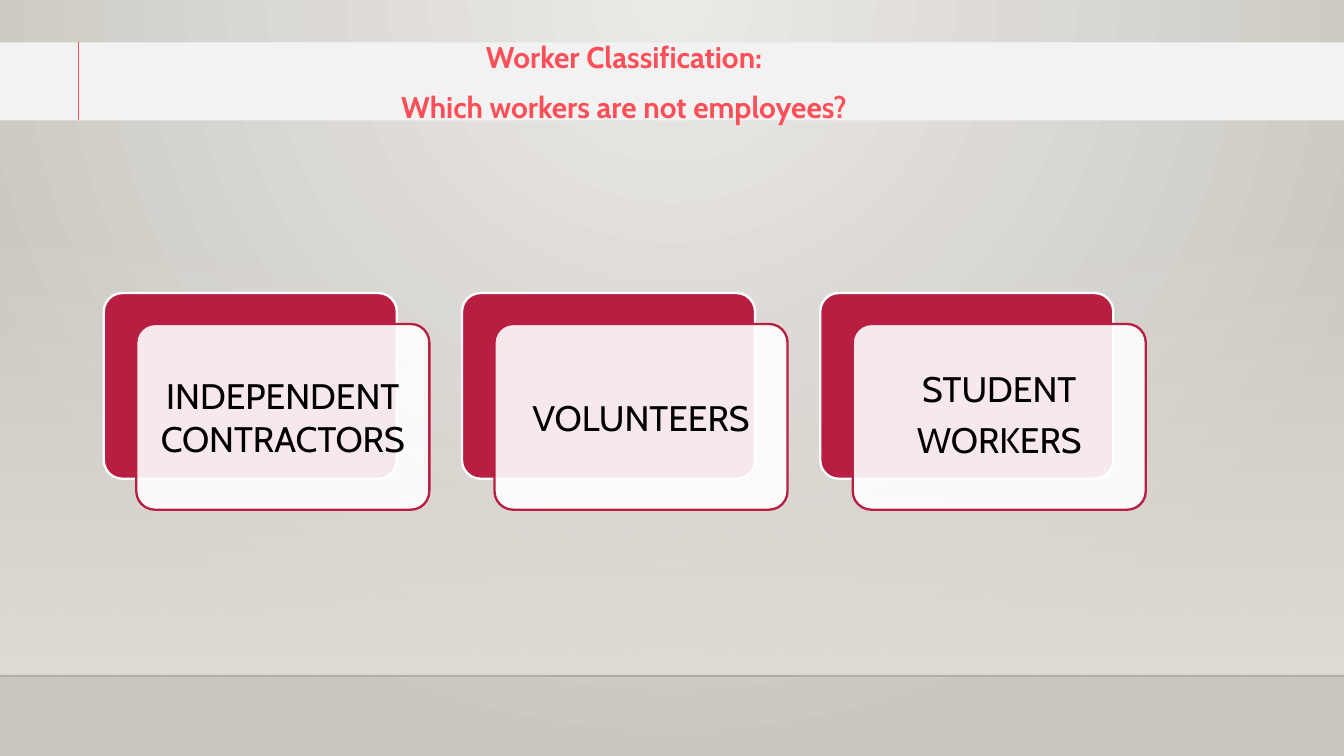
"""Build the worker classification slide with three layered cards."""
from dataclasses import dataclass

from lxml import etree
from pptx import Presentation
from pptx.dml.color import RGBColor
from pptx.enum import shapes, text
from pptx.oxml import ns
from pptx.util import Pt


@dataclass(frozen=True)
class Theme:
    font: str = "Cabin"
    title_size: float = 16
    card_size: float = 19
    coral: RGBColor = RGBColor(0xFD, 0x4F, 0x57)
    crimson: RGBColor = RGBColor(0xB7, 0x1E, 0x42)
    white: RGBColor = RGBColor(0xFF, 0xFF, 0xFF)
    black: RGBColor = RGBColor(0, 0, 0)
    band: RGBColor = RGBColor(0xF2, 0xF2, 0xF2)
    wall: RGBColor = RGBColor(0xDF, 0xDB, 0xD5)
    glow: RGBColor = RGBColor(0xEC, 0xEA, 0xE7)
    edge: RGBColor = RGBColor(0xCA, 0xC7, 0xC1)
    shade: RGBColor = RGBColor(0, 0, 1)


def set_opacity(color, percent):
    etree.SubElement(color, ns.qn("a:alpha"), val=str(percent * 1000))


def add_panel(page, kind, left, top, width, height):
    panel = page.shapes.add_shape(kind, Pt(left), Pt(top), Pt(width), Pt(height))
    panel.shadow.inherit = False
    return panel


theme = Theme()
deck = Presentation()
deck.slide_width, deck.slide_height = Pt(720), Pt(405)
page = deck.slides.add_slide(deck.slide_layouts[5])

backdrop = page.background.fill
backdrop.gradient()
for stop, color, position in zip(backdrop.gradient_stops, (theme.glow, theme.edge), (0, 1)):
    stop.color.rgb = color
    stop.position = position
linear = page._element.xpath("./p:cSld/p:bg//a:lin")[0]
radial = etree.Element(ns.qn("a:path"), path="circle")
etree.SubElement(radial, ns.qn("a:fillToRect"), l="43000", t="0", r="43000", b="100000")
linear.getparent().replace(linear, radial)

wall = add_panel(page, shapes.MSO_SHAPE.RECTANGLE, 0, 119.5, 720, 242.5)
wall.line.fill.background()
wall.fill.gradient()
wall.fill.gradient_angle = 270
for stop, position in zip(wall.fill.gradient_stops, (0, 1)):
    stop.color.rgb = theme.wall
    stop.position = position
set_opacity(wall._element.xpath(".//a:gs/a:srgbClr")[0], 0)

band = add_panel(page, shapes.MSO_SHAPE.RECTANGLE, 0, 22.7, 720, 41.8)
band.fill.solid()
band.fill.fore_color.rgb = theme.band
band.line.fill.background()

rules = (
    (0, 362, 720, 362, theme.shade, 1, 20),
    (42, 22.7, 42, 64.5, theme.coral, 0.75, 100),
)
for left, top, right, bottom, color, weight, opacity in rules:
    rule = page.shapes.add_connector(
        shapes.MSO_CONNECTOR.STRAIGHT, Pt(left), Pt(top), Pt(right), Pt(bottom)
    )
    rule.line.color.rgb = color
    rule.line.width = Pt(weight)
    etree.SubElement(rule._element.spPr, ns.qn("a:effectLst"))
    if opacity < 100:
        set_opacity(rule._element.xpath(".//a:ln//a:srgbClr")[0], opacity)

title = page.shapes.title
page.shapes._spTree.append(title._element)
title.left, title.top, title.width, title.height = Pt(55.4), Pt(17.3), Pt(558), Pt(42.5)
frame = title.text_frame
frame.text = "Worker Classification:\nWhich workers are not employees?"
frame.word_wrap = True
frame.auto_size = text.MSO_AUTO_SIZE.NONE
frame.vertical_anchor = text.MSO_ANCHOR.TOP
for index, para in enumerate(frame.paragraphs):
    para.alignment = text.PP_ALIGN.CENTER
    para.space_before = Pt(7.5 if index else 0)
    for span in para.runs:
        span.font.name = theme.font
        span.font.size = Pt(theme.title_size)
        span.font.bold = True
        span.font.color.rgb = theme.coral

cards = (("INDEPENDENT CONTRACTORS", 1), ("VOLUNTEERS", 1), ("STUDENT\nWORKERS", 0.9))
for column, (label, spacing) in enumerate(cards):
    left, top = 55.6 + 191.9 * column, 157
    back = add_panel(page, shapes.MSO_SHAPE.ROUNDED_RECTANGLE, left, top, 157, 99.5)
    front = add_panel(
        page, shapes.MSO_SHAPE.ROUNDED_RECTANGLE, left + 17.4, top + 16.6, 157, 99.5
    )
    for card, fill, outline in (
        (back, theme.crimson, theme.white),
        (front, theme.white, theme.crimson),
    ):
        card.adjustments[0] = 0.1
        card.fill.solid()
        card.fill.fore_color.rgb = fill
        card.line.color.rgb = outline
        card.line.width = Pt(1.25)
    set_opacity(front._element.xpath("./p:spPr/a:solidFill/a:srgbClr")[0], 90)

    frame = front.text_frame
    frame.text = label
    frame.word_wrap = True
    frame.vertical_anchor = text.MSO_ANCHOR.MIDDLE
    frame.margin_left = frame.margin_right = Pt(5.7)
    frame.margin_top = frame.margin_bottom = Pt(5.7)
    for para in frame.paragraphs:
        para.alignment = text.PP_ALIGN.CENTER
        para.line_spacing = spacing
        para.space_after = Pt(6.65)
        for span in para.runs:
            span.font.name = theme.font
            span.font.size = Pt(theme.card_size)
            span.font.color.rgb = theme.black

deck.save("out.pptx")
